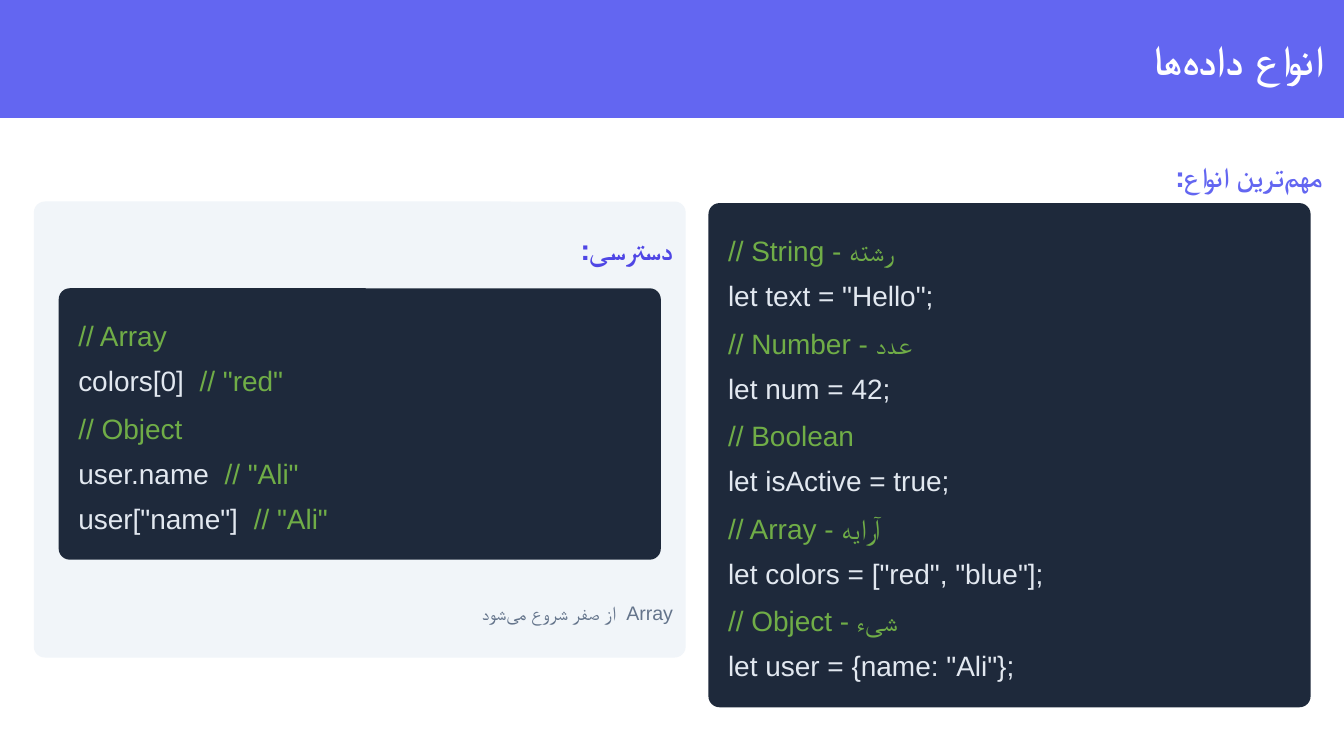
from pptx import Presentation
from pptx.dml.color import RGBColor
from pptx.enum.shapes import MSO_SHAPE
from pptx.enum.text import PP_ALIGN
from pptx.util import Cm, Pt

WHITE = RGBColor(0xFF, 0xFF, 0xFF)
INDIGO = RGBColor(0x63, 0x66, 0xF1)
DEEP_INDIGO = RGBColor(0x4F, 0x46, 0xE5)
NAVY = RGBColor(0x1E, 0x29, 0x3B)
MIST = RGBColor(0xF1, 0xF5, 0xF9)
SLATE = RGBColor(0x64, 0x74, 0x8B)
CODE = RGBColor(0xE2, 0xE8, 0xF0)
COMMENT = RGBColor(0x70, 0xAD, 0x47)
HALF_SPACE = chr(0x200C)


class Lesson:
    font_name = "Arial"
    corner = 0.21
    code_width = 11.38
    line_height = 0.74

    def __init__(self, slide):
        self.slide = slide

    def panel(self, left, top, width, height, color, rounded=True):
        kind = MSO_SHAPE.ROUNDED_RECTANGLE if rounded else MSO_SHAPE.RECTANGLE
        panel = self.slide.shapes.add_shape(
            kind, Cm(left), Cm(top), Cm(width), Cm(height))
        if rounded:
            panel.adjustments[0] = self.corner / min(width, height)
        panel.shadow.inherit = False
        panel.fill.solid()
        panel.fill.fore_color.rgb = color
        panel.line.fill.background()

    def paragraph(self, left, top, width, height, size, spacing, before=0, after=0):
        frame = self.slide.shapes.add_textbox(
            Cm(left), Cm(top), Cm(width), Cm(height)).text_frame
        frame.word_wrap = True
        frame.margin_left = frame.margin_top = 0
        frame.margin_right = frame.margin_bottom = 0
        paragraph = frame.paragraphs[0]
        paragraph.font.name = self.font_name
        paragraph.font.size = Pt(size)
        paragraph.line_spacing = Pt(spacing)
        paragraph.space_before = Pt(before)
        paragraph.space_after = Pt(after)
        return paragraph

    def persian(self, text, left, top, width, height, color,
                size=15, spacing=21, bold=True, before=0, after=0):
        paragraph = self.paragraph(
            left, top, width, height, size, spacing, before, after)
        paragraph.alignment = PP_ALIGN.RIGHT
        paragraph._p.get_or_add_pPr().set("rtl", "1")
        paragraph.font.bold = bold
        paragraph.font.color.rgb = color
        paragraph.add_run().text = text

    def code_line(self, line, left, top, before):
        paragraph = self.paragraph(
            left, top, 10.85, self.line_height, 15, 21, before, 3)
        statement, slashes, remark = line.partition("//")
        parts = [(statement, CODE), (slashes + remark, COMMENT)]
        parts = [(text, color) for text, color in parts if text]
        for text, color in parts:
            run = paragraph.add_run()
            run.text = text
            if len(parts) > 1:
                run.font.color.rgb = color
            else:
                paragraph.font.color.rgb = color

    def code_block(self, left, top, height, lines):
        self.panel(left, top, self.code_width, height, NAVY)
        line_top = top + 0.47
        for index, line in enumerate(lines):
            new_topic = index > 0 and line.startswith("//")
            if index:
                line_top += 0.9 if new_topic else 0.85
            self.code_line(line, left + 0.37, line_top, 4.5 if new_topic else 3)


def main():
    deck = Presentation()
    deck.slide_width, deck.slide_height = Cm(25.4), Cm(14.29)
    lesson = Lesson(deck.slides.add_slide(deck.slide_layouts[6]))

    lesson.panel(0, 0, 25.4, 2.23, INDIGO, rounded=False)
    lesson.persian(f"انواع داده{HALF_SPACE}ها",
                   12.67, 0.64, 12.34, 0.95, WHITE, 22.5, 27)

    lesson.persian(f"مهم{HALF_SPACE}ترین انواع:", 13.39, 2.9, 11.61, 0.74, INDIGO)
    lesson.code_block(13.39, 3.84, 9.53, [
        "// String - رشته",
        'let text = "Hello";',
        "// Number - عدد",
        "let num = 42;",
        "// Boolean",
        "let isActive = true;",
        "// Array - آرایه",
        'let colors = ["red", "blue"];',
        "// Object - شیء",
        'let user = {name: "Ali"};',
    ])

    lesson.panel(0.64, 3.81, 12.32, 8.62, MIST)
    lesson.persian("دسترسی:", 1.11, 4.29, 11.61, 0.74, DEEP_INDIGO)
    lesson.code_block(1.11, 5.45, 5.13, [
        "// Array",
        'colors[0]  // "red"',
        "// Object",
        'user.name  // "Ali"',
        'user["name"]  // "Ali"',
    ])
    lesson.persian(f"Array  از صفر شروع می{HALF_SPACE}شود",
                   1.11, 11.28, 11.61, 0.58, SLATE,
                   10.5, 15, bold=False, before=7.5, after=3)

    deck.save("out.pptx")


if __name__ == "__main__":
    main()
